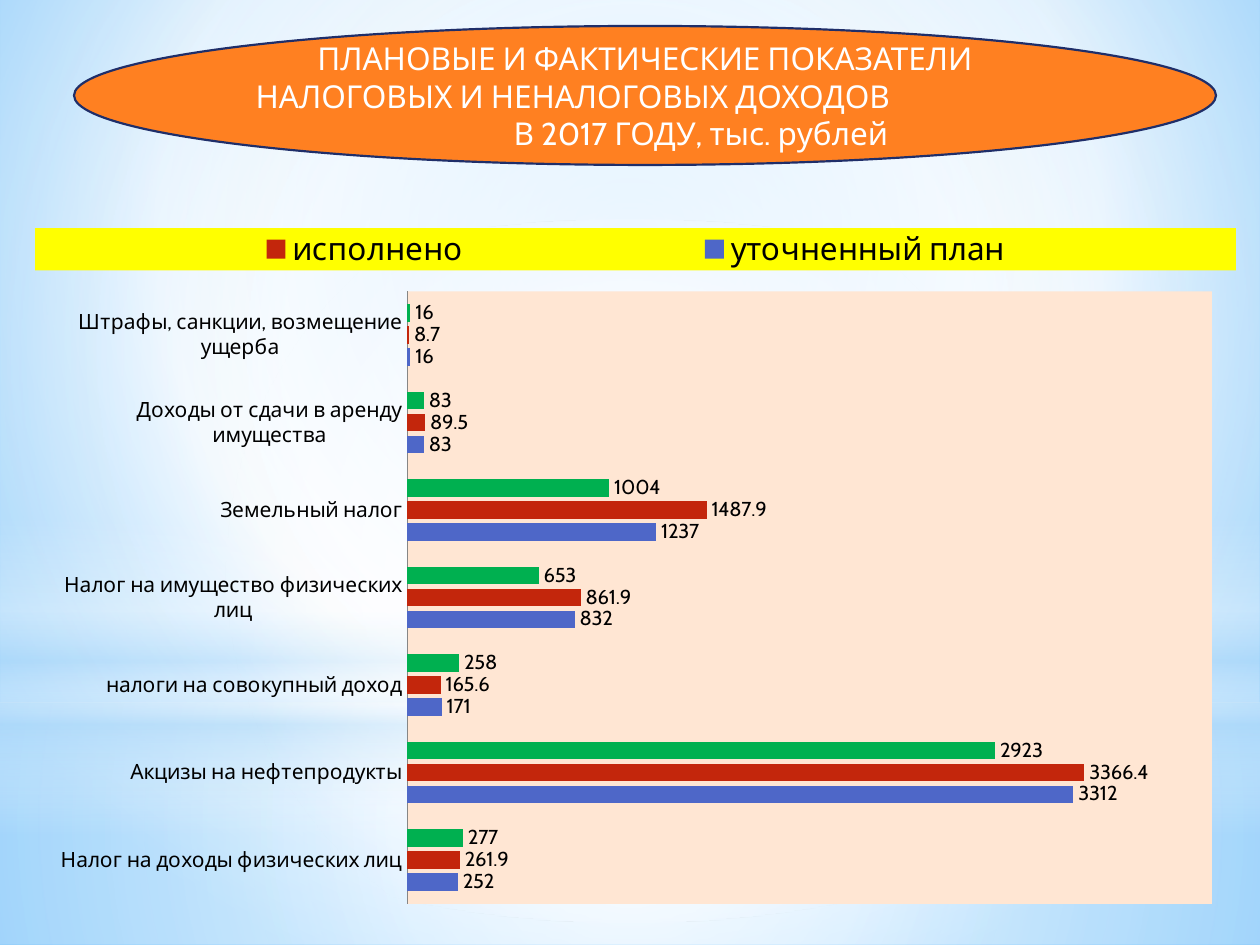
from lxml import etree
from pptx import Presentation
from pptx.chart import data as cd
from pptx.dml import color
from pptx.enum import chart as ch, shapes, text
from pptx.oxml import ns, parse_xml
from pptx.util import Pt

PX = 914400 // 126
FONT = "Cabin"
NSD = ns.nsdecls("a", "c")
WHITE, MIST = "FFFFFF", "B4DCFA"


def rgb(code):
    return color.RGBColor.from_string(code)


def grad(stops, focus=None):
    """Gradient from (place, colour, opacity) stops: round with a focus, else downward."""
    marks = "".join(
        f'<a:gs pos="{pos * 1000}"><a:srgbClr val="{code}">'
        f'<a:alpha val="{alpha * 1000}"/></a:srgbClr></a:gs>'
        for pos, code, alpha in stops)
    if focus:
        rect = " ".join(f'{side}="{v * 1000}"' for side, v in zip("ltrb", focus))
        way = f'<a:path path="circle"><a:fillToRect {rect}/></a:path>'
    else:
        way = '<a:lin ang="5400000" scaled="0"/>'
    return parse_xml(f'<a:gradFill {NSD} rotWithShape="1"><a:gsLst>{marks}</a:gsLst>{way}</a:gradFill>')


def swap(host, fill):
    """Put a gradient in place of the solid fill."""
    old = host.find(ns.qn("a:solidFill"))
    host.replace(old, fill)


def layout(x, y, w, h, inner=False):
    """Manual chart layout in fractions of the chart frame."""
    kind = '<c:layoutTarget val="inner"/>' if inner else ""
    vals = "".join(f'<c:{k} val="{v}"/>' for k, v in zip("xywh", (x, y, w, h)))
    return parse_xml(
        f'<c:layout {NSD}><c:manualLayout>{kind}<c:xMode val="edge"/>'
        f'<c:yMode val="edge"/>{vals}</c:manualLayout></c:layout>')


def paint(code):
    return parse_xml(f'<c:spPr {NSD}><a:solidFill><a:srgbClr val="{code}"/>'
                     '</a:solidFill><a:ln><a:noFill/></a:ln></c:spPr>')


def place(host, item, index):
    """Set the layout of a chart part, dropping any earlier one."""
    for old in host.findall(ns.qn("c:layout")):
        host.remove(old)
    host.insert(index, item)


class Deck:
    def __init__(self, wide, high):
        self.prs = Presentation()
        self.prs.slide_width, self.prs.slide_height = wide * PX, high * PX
        self.slide = self.prs.slides.add_slide(self.prs.slide_layouts[6])

    def back(self, fill):
        bg = self.slide.background
        bg.fill.solid()
        bg.fill.fore_color.rgb = rgb(WHITE)
        swap(self.slide.element.cSld.bg.bgPr, fill)

    def shape(self, kind, box, fill, line=None):
        item = self.slide.shapes.add_shape(kind, *(v * PX for v in box))
        item.shadow.inherit = False
        item.fill.solid()
        if isinstance(fill, str):
            item.fill.fore_color.rgb = rgb(fill)
        else:
            swap(item.element.spPr, fill)
        if line:
            item.line.color.rgb = rgb(line)
            item.line.width = Pt(1.25)
        else:
            item.line.fill.background()
        return item

    def title(self, box, lines):
        item = self.shape(shapes.MSO_SHAPE.OVAL, box, "FF8021", "1F2E69")
        frame = item.text_frame
        frame.word_wrap = True
        frame.vertical_anchor = text.MSO_ANCHOR.MIDDLE
        for i, (words, align, shift) in enumerate(lines):
            para = frame.paragraphs[0] if i == 0 else frame.add_paragraph()
            para.alignment = align
            para._p.get_or_add_pPr().set("marL", str(shift * PX))
            run = para.add_run()
            run.text = words
            self.style(run.font, 18, WHITE)

    def style(self, font, size, code="000000"):
        font.name, font.size = FONT, Pt(size)
        font.color.rgb = rgb(code)

    def bars(self, box, cats, rows):
        data = cd.CategoryChartData()
        data.categories = cats
        for name, _, vals in rows:
            data.add_series(name, vals)
        chart = self.slide.shapes.add_chart(
            ch.XL_CHART_TYPE.BAR_CLUSTERED, *(v * PX for v in box), data).chart
        chart.has_title = False
        self.style(chart.font, 18)

        # Bars and their values
        plot = chart.plots[0]
        plot.gap_width, plot.overlap = 150, -25
        plot.vary_by_categories = False
        for ser, (_, code, _) in zip(plot.series, rows):
            ser.format.fill.solid()
            ser.format.fill.fore_color.rgb = rgb(code)
            tags = ser.data_labels
            tags.show_value = True
            tags.position = ch.XL_LABEL_POSITION.OUTSIDE_END
            self.style(tags.font, 11.5)

        # Axes
        axis = chart.category_axis
        axis.major_tick_mark = axis.minor_tick_mark = ch.XL_TICK_MARK.NONE
        axis.format.line.color.rgb = rgb("868686")
        self.style(axis.tick_labels.font, 12)
        scale = chart.value_axis
        scale.minimum_scale, scale.maximum_scale = 0, 4000
        scale.has_major_gridlines = False
        scale.visible = False

        # Plot area
        area = chart.element.find(".//" + ns.qn("c:plotArea"))
        place(area, layout(0.31, 0.11, 0.67, 0.87, True), 0)
        area.append(paint("FFE6D3"))

        # Legend across the top, named series only
        chart.has_legend = True
        key = chart.legend
        key.position = ch.XL_LEGEND_POSITION.TOP
        key.include_in_layout = False
        self.style(key.font, 18)
        node = key._element
        place(node, layout(0, 0.02, 1, 0.06), 1)
        entry = etree.Element(ns.qn("c:legendEntry"))
        for tag, val in (("c:idx", "0"), ("c:delete", "1")):
            etree.SubElement(entry, ns.qn(tag)).set("val", val)
        node.insert(1, entry)
        node.find(ns.qn("c:overlay")).addnext(paint("FFFF00"))


def main():
    deck = Deck(1260, 945)
    rect, oval = shapes.MSO_SHAPE.RECTANGLE, shapes.MSO_SHAPE.OVAL
    mid = (50, 50, 50, 50)

    # Sky backdrop
    deck.back(grad([(0, "9ED5FF", 100), (60, WHITE, 100), (100, "5BB9FF", 100)],
                   (20, 10, 20, 60)))
    deck.shape(rect, (0, 703, 1260, 242),
               grad([(0, WHITE, 91), (37, WHITE, 76), (100, MIST, 79)], mid))
    deck.shape(rect, (0, 0, 1260, 703),
               grad([(0, WHITE, 89), (48, WHITE, 62), (100, MIST, 79)], mid))
    deck.shape(rect, (0, 519, 1260, 315),
               grad([(0, WHITE, 0), (29, WHITE, 30), (45, MIST, 40),
                     (55, WHITE, 26), (65, MIST, 60), (100, WHITE, 0)]))
    deck.shape(oval, (0, 220, 1260, 703),
               grad([(0, WHITE, 100), (56, WHITE, 0)], mid))

    # Revenue chart
    cats = ["Налог на доходы физических лиц", "Акцизы на нефтепродукты",
            "налоги на совокупный доход", "Налог на имущество физических лиц",
            "Земельный налог", "Доходы от сдачи в аренду имущества",
            "Штрафы, санкции, возмещение ущерба"]
    deck.bars((35, 214, 1201, 704), cats, [
        ("уточненный план", "4E67C8", (252, 3312, 171, 832, 1237, 83, 16)),
        ("исполнено", "C3260C", (261.9, 3366.4, 165.6, 861.9, 1487.9, 89.5, 8.7)),
        ("", "00B050", (277, 2923, 258, 653, 1004, 83, 16)),
    ])

    # Title in staggered lines
    left, center = text.PP_ALIGN.LEFT, text.PP_ALIGN.CENTER
    deck.title((74, 26, 1142, 139), [
        ("ПЛАНОВЫЕ И ФАКТИЧЕСКИЕ ПОКАЗАТЕЛИ", center, 0),
        ("НАЛОГОВЫХ И НЕНАЛОГОВЫХ ДОХОДОВ", left, 2),
        ("В 2017 ГОДУ, тыс. рублей", left, 260),
    ])
    deck.prs.save("out.pptx")


if __name__ == "__main__":
    main()
